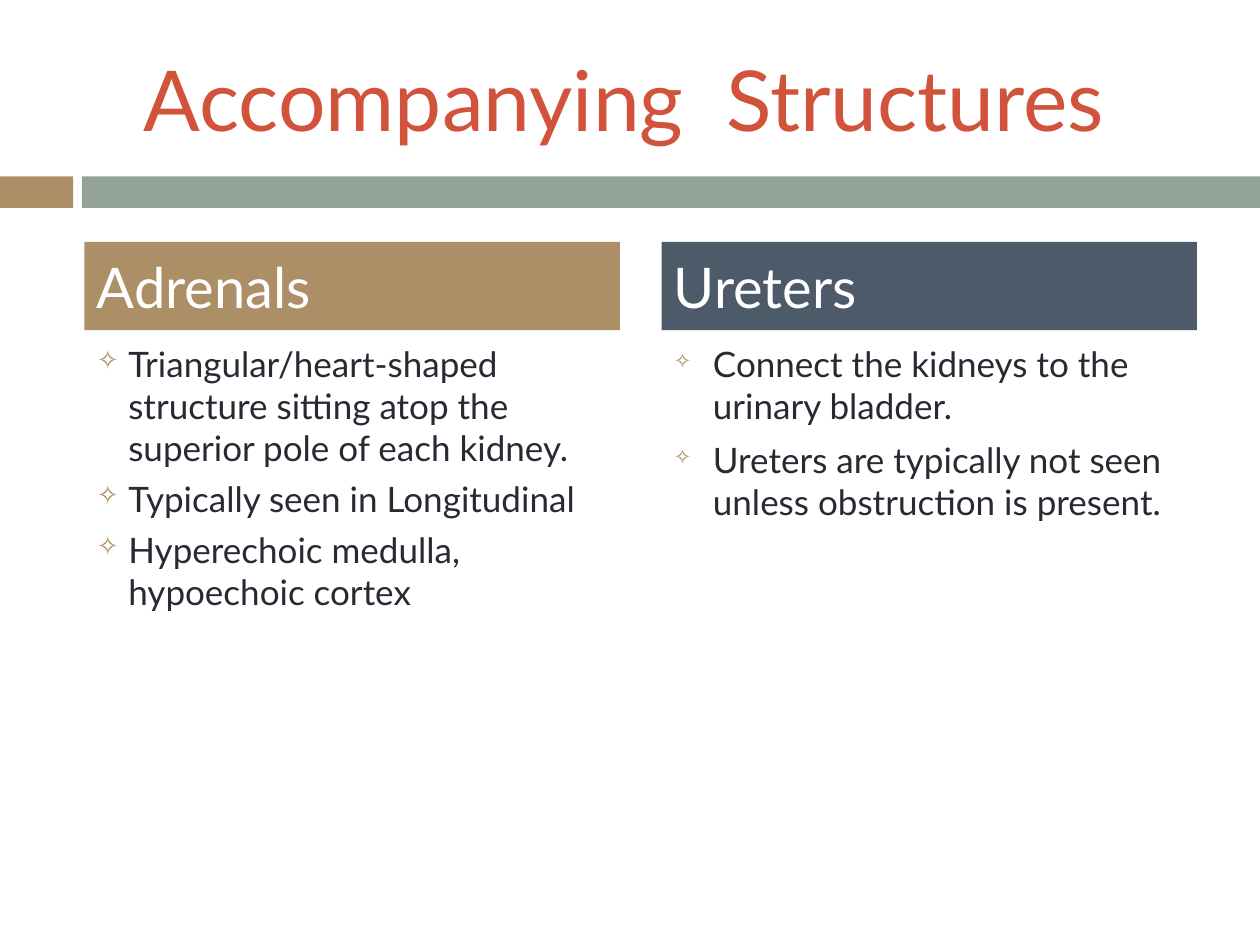
from lxml import etree
from pptx import Presentation
from pptx import util as u
from pptx.dml.color import RGBColor
from pptx.enum import shapes, text
from pptx.oxml.ns import qn

TAN = RGBColor(0xAD, 0x8F, 0x67)
SAGE = RGBColor(0x93, 0xA2, 0x99)
SLATE = RGBColor(0x4C, 0x5A, 0x6A)
RED = RGBColor(0xD2, 0x53, 0x3C)
INK = RGBColor(0x29, 0x29, 0x34)
WHITE = RGBColor(0xFF, 0xFF, 0xFF)

WIDTH, HEIGHT = 10, 7.5
COLUMN_LEFT, COLUMN_WIDTH, COLUMN_STEP = 0.67, 4.25, 4.58
BAND_TOP, BAND_HEIGHT = 1.4, 0.25
HEADING_TOP, HEADING_HEIGHT = 1.92, 0.7
BODY_TOP, BODY_HEIGHT = 2.67, 3.92

# heading, heading fill, indent (in), space before (pt), bullet size (%), points
COLUMNS = [
    ("Adrenals", TAN, 0.25, 5, 75, [
        "Triangular/heart-shaped structure sitting atop the superior pole of each kidney.",
        "Typically seen in Longitudinal",
        "Hyperechoic medulla, hypoechoic cortex",
    ]),
    ("Ureters", SLATE, 0.31, 7, 60, [
        "Connect the kidneys to the urinary bladder.",
        "Ureters are typically not seen unless obstruction is present.",
    ]),
]


def add_box(left, top, width, height, fill=None):
    """Add a filled rectangle, or a wrapping text box when there is no fill."""
    area = [u.Inches(length) for length in (left, top, width, height)]
    if fill is None:
        box = page.shapes.add_textbox(*area)
    else:
        box = page.shapes.add_shape(shapes.MSO_SHAPE.RECTANGLE, *area)
        box.shadow.inherit = False
        box.fill.solid()
        box.fill.fore_color.rgb = fill
        box.line.fill.background()
    box.text_frame.word_wrap = True
    return box


def write(para, words, size, color, align=text.PP_ALIGN.LEFT):
    para.text = words
    para.alignment = align
    for span in para.runs:
        span.font.name = "Lato"
        span.font.size = u.Pt(size)
        span.font.color.rgb = color


deck = Presentation()
deck.slide_width, deck.slide_height = u.Inches(WIDTH), u.Inches(HEIGHT)
page = deck.slides.add_slide(deck.slide_layouts[6])

add_box(0, BAND_TOP, 0.58, BAND_HEIGHT, TAN)
add_box(0.65, BAND_TOP, WIDTH - 0.65, BAND_HEIGHT, SAGE)

title = add_box(0.58, 0.3, 8.92, 0.95).text_frame
title.vertical_anchor = text.MSO_ANCHOR.MIDDLE
write(title.paragraphs[0], "Accompanying  Structures ", 48, RED, text.PP_ALIGN.CENTER)

for number, (heading, fill, indent, space, bullet_size, points) in enumerate(COLUMNS):
    left = COLUMN_LEFT + number * COLUMN_STEP

    header = add_box(left, HEADING_TOP, COLUMN_WIDTH, HEADING_HEIGHT, fill).text_frame
    header.vertical_anchor = text.MSO_ANCHOR.MIDDLE
    write(header.paragraphs[0], heading, 32, WHITE)

    body = add_box(left, BODY_TOP, COLUMN_WIDTH, BODY_HEIGHT).text_frame
    for index, point in enumerate(points):
        para = body.add_paragraph() if index else body.paragraphs[0]
        write(para, point, 20, INK)
        para.space_before = u.Pt(space)
        props = para._p.get_or_add_pPr()
        props.set("marL", str(u.Inches(indent)))
        props.set("indent", str(-u.Inches(indent)))
        bullet_color = etree.SubElement(props, qn("a:buClr"))
        etree.SubElement(bullet_color, qn("a:srgbClr"), val=str(TAN))
        etree.SubElement(props, qn("a:buSzPct"), val=str(bullet_size * 1000))
        etree.SubElement(props, qn("a:buChar"), char="✧")

deck.save("out.pptx")
